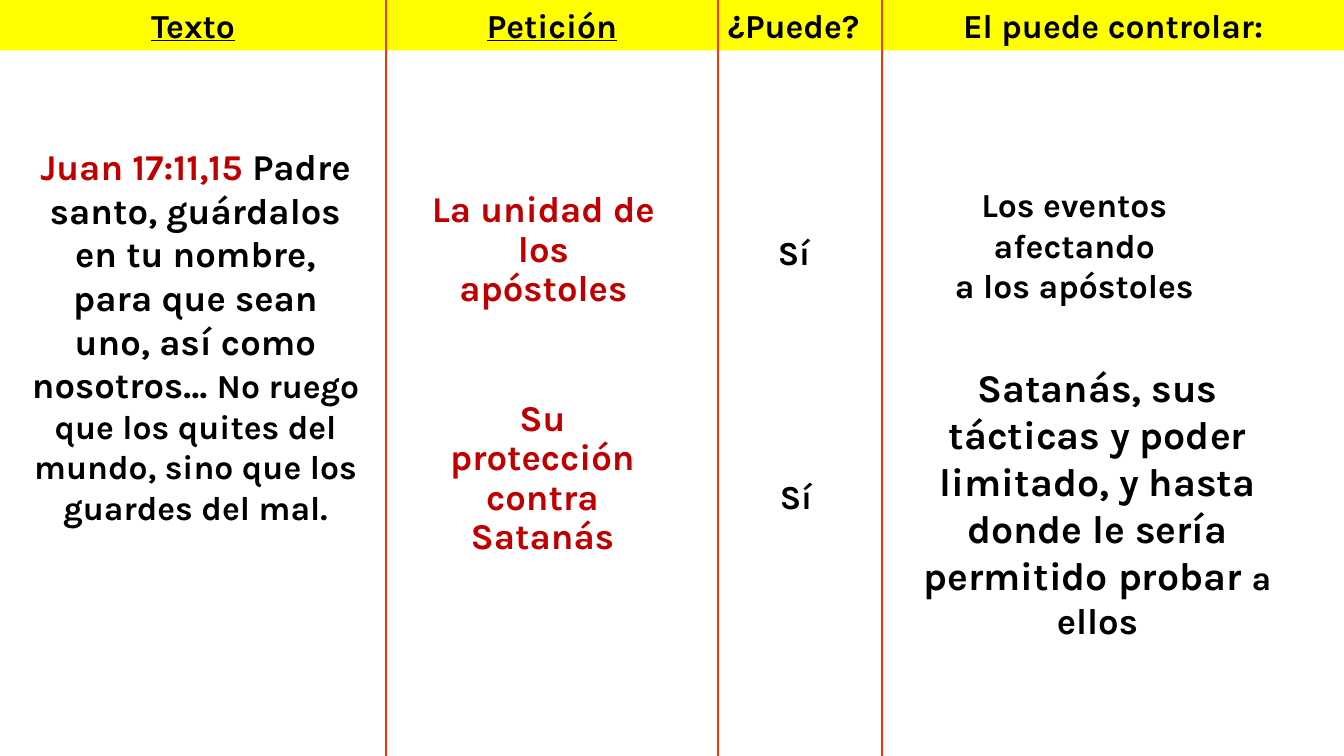
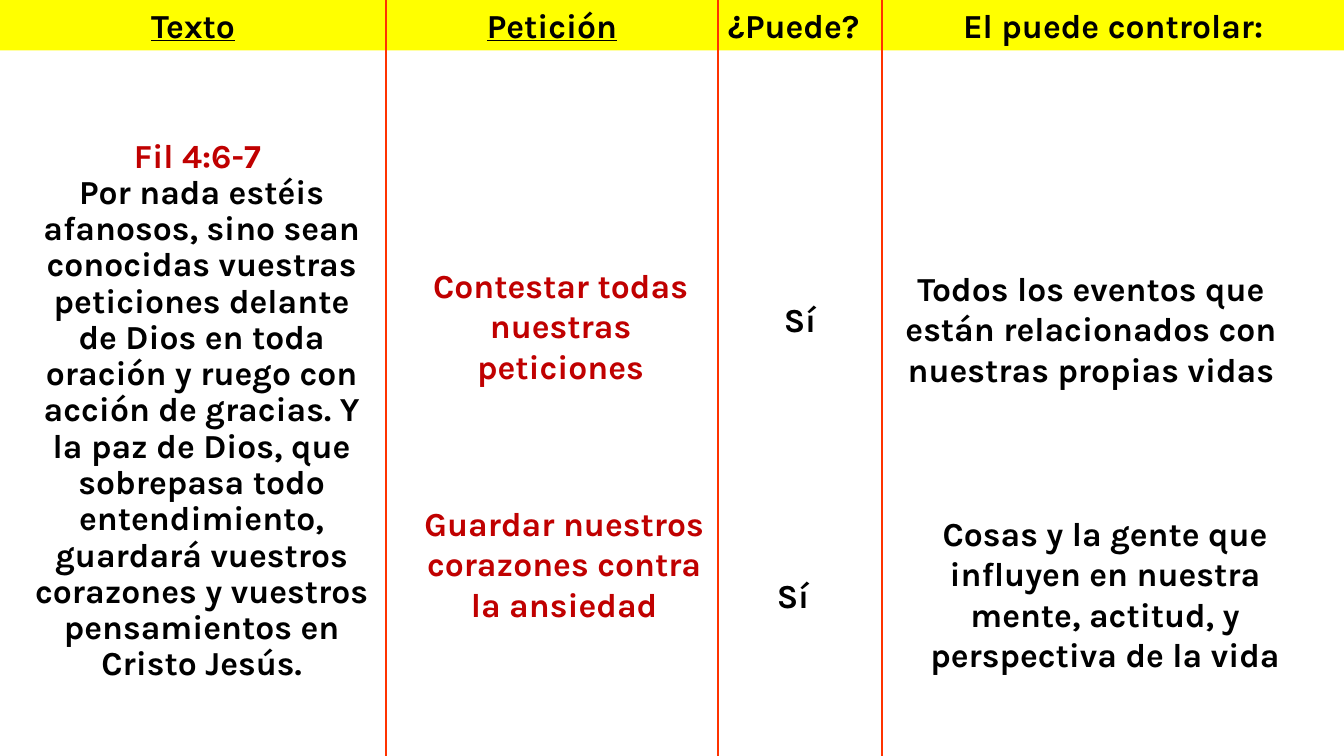
from pptx import Presentation
from pptx.dml.color import RGBColor
from pptx.enum.shapes import MSO_CONNECTOR, MSO_SHAPE
from pptx.enum.text import MSO_ANCHOR, MSO_AUTO_SIZE, PP_ALIGN
from pptx.oxml.ns import qn
from pptx.util import Inches, Pt
from lxml import etree

RECTANGLE = MSO_SHAPE.RECTANGLE
STRAIGHT = MSO_CONNECTOR.STRAIGHT
TOP = MSO_ANCHOR.TOP
GROW = MSO_AUTO_SIZE.SHAPE_TO_FIT_TEXT
CENTER, LEFT = PP_ALIGN.CENTER, PP_ALIGN.LEFT

BLACK = RGBColor(0x00, 0x00, 0x00)
RED = RGBColor(0xC0, 0x00, 0x00)
YELLOW = RGBColor(0xFF, 0xFF, 0x00)
ORANGE = RGBColor(0xFF, 0x33, 0x00)

FONT = "Karla"
SLIDE_WIDTH, SLIDE_HEIGHT = 13.33, 7.5
BAND_HEIGHT = 0.5
COLUMN_EDGES = [0, 3.83, 7.12, 8.75, SLIDE_WIDTH]
TEXT, PETITION, ANSWER, CONTROL = range(4)

HEADINGS = [
    ("Texto", True, CENTER),
    ("Petición", True, CENTER),
    ("¿Puede?", False, LEFT),
    ("El puede controlar:", False, CENTER),
]

YES = [[("Sí", 24, BLACK)]]

SLIDES = [
    [
        (TEXT, (0.21, 1.38, 3.46, 4.34), 1, [[
            ("Juan 17:11,15 ", 26, RED),
            ("Padre santo, guárdalos en tu nombre, para que sean uno, "
             "así como nosotros… ", 26, BLACK),
            ("No ruego que los quites del mundo, sino que los guardes "
             "del mal.", 24, BLACK)]]),
        (PETITION, (0.35, 1.85, 2.42, 1.28), 0.9,
         [[("La unidad de los apóstoles", 26, RED)]]),
        (ANSWER, (0.13, 2.25, 1.25, 0.5), 1, YES),
        (CONTROL, (0.07, 1.78, 3.67, 1.31), 1, [
            [("Los eventos afectando", 24, BLACK)],
            [("a los apóstoles", 24, BLACK)]]),
        (PETITION, (0.34, 3.92, 2.42, 1.68), 0.9,
         [[("Su protección contra Satanás", 26, RED)]]),
        (ANSWER, (0.15, 4.67, 1.25, 0.5), 1, YES),
        (CONTROL, (0.07, 3.55, 4.13, 2.89), 1, [[
            ("Satanás, sus tácticas y poder limitado, y hasta donde "
             "le sería permitido probar ", 28, BLACK),
            ("a ", 24, BLACK),
            ("ellos", 26, BLACK)]]),
    ],
    [
        (TEXT, (0.25, 1.33, 3.5, 5.92), 0.9, [
            [("Fil 4:6-7 ", 24, RED)],
            [("Por nada estéis afanosos, sino sean conocidas vuestras "
              "peticiones delante de Dios en toda oración y ruego con "
              "acción de gracias. Y la paz de Dios, que sobrepasa todo "
              "entendimiento, guardará vuestros corazones y vuestros "
              "pensamientos en Cristo Jesús.", 24, BLACK)]]),
        (PETITION, (0.25, 2.58, 2.96, 1.31), 1,
         [[("Contestar todas nuestras peticiones", 24, RED)]]),
        (ANSWER, (0.19, 2.92, 1.25, 0.5), 1, YES),
        (CONTROL, (-0.14, 2.61, 4.42, 1.31), 1, [[
            ("Todos los eventos que están relacionados con nuestras "
             "propias vidas", 24, BLACK)]]),
        (PETITION, (0.25, 4.94, 3.03, 2.12), 1,
         [[("Guardar nuestros corazones contra la ansiedad", 24, RED)]]),
        (ANSWER, (0.12, 5.65, 1.25, 0.5), 1, YES),
        (CONTROL, (0, 5.04, 4.42, 1.72), 1, [[
            ("Cosas y la gente que influyen en nuestra mente, actitud, "
             "y perspectiva de la vida", 24, BLACK)]]),
    ],
]


def set_values(target, values):
    for name, value in values.items():
        setattr(target, name, value)


def write_text(shape, paragraphs, spacing=1, align=CENTER, underline=False):
    frame = shape.text_frame
    set_values(frame, {"word_wrap": True, "auto_size": GROW,
                       "vertical_anchor": TOP})
    for index, spans in enumerate(paragraphs):
        para = frame.add_paragraph() if index else frame.paragraphs[0]
        set_values(para, {"alignment": align, "line_spacing": spacing})
        for text, size, color in spans:
            span = para.add_run()
            span.text = text
            set_values(span.font, {"name": FONT, "size": Pt(size),
                                   "bold": True, "underline": underline})
            span.font.color.rgb = color


def add_passage(page, column, box, spacing, paragraphs):
    left, top, width, height = box
    passage = page.shapes.add_textbox(
        Inches(COLUMN_EDGES[column] + left), Inches(top),
        Inches(width), Inches(height))
    write_text(passage, paragraphs, spacing)


def add_divider(page, left):
    divider = page.shapes.add_connector(
        STRAIGHT, Inches(left), Inches(0), Inches(left), Inches(SLIDE_HEIGHT))
    divider.line.color.rgb = ORANGE
    divider.line.width = Pt(1.5)
    etree.SubElement(divider._element.spPr, qn("a:effectLst"))


def add_heading(page, left, right, text, underline, align):
    heading = page.shapes.add_shape(
        RECTANGLE, Inches(left), Inches(0),
        Inches(right - left), Inches(BAND_HEIGHT))
    heading.shadow.inherit = False
    heading.fill.solid()
    heading.fill.fore_color.rgb = YELLOW
    heading.line.fill.background()
    write_text(heading, [[(text, 24, BLACK)]], align=align,
               underline=underline)


def add_columns(page):
    for left, right, heading in zip(COLUMN_EDGES, COLUMN_EDGES[1:], HEADINGS):
        add_heading(page, left, right, *heading)
    for left in COLUMN_EDGES[1:-1]:
        add_divider(page, left)


def main():
    deck = Presentation()
    set_values(deck, {"slide_width": Inches(SLIDE_WIDTH),
                      "slide_height": Inches(SLIDE_HEIGHT)})
    for passages in SLIDES:
        page = deck.slides.add_slide(deck.slide_layouts[6])
        for passage in passages:
            add_passage(page, *passage)
        add_columns(page)
    deck.save("out.pptx")


if __name__ == "__main__":
    main()
